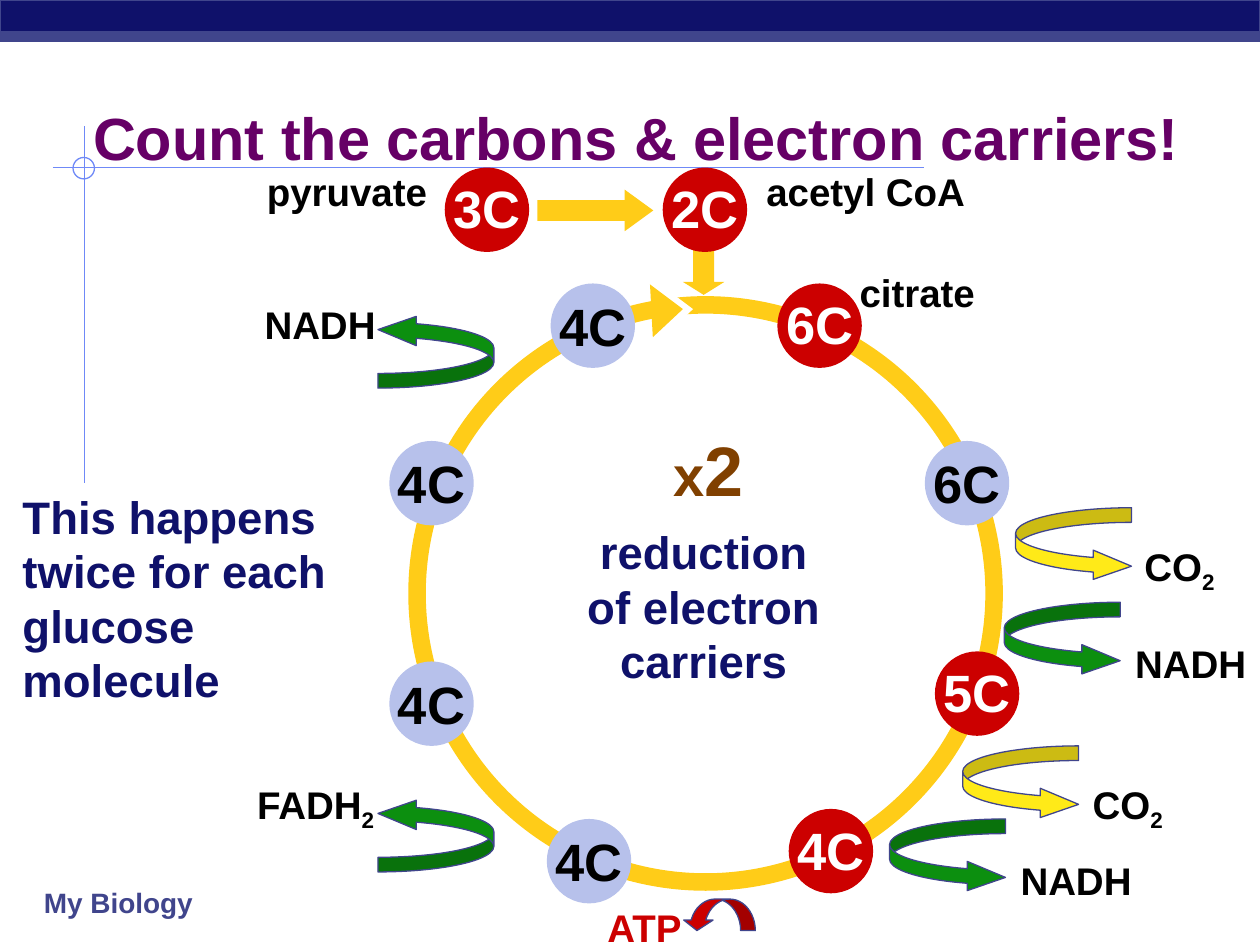
from pptx import Presentation
from pptx.dml.color import RGBColor
from pptx.enum.shapes import MSO_CONNECTOR, MSO_SHAPE
from pptx.enum.text import MSO_ANCHOR, MSO_AUTO_SIZE, PP_ALIGN
from pptx.oxml.ns import qn
from pptx.util import Inches, Pt
from lxml import etree

STRAIGHT = MSO_CONNECTOR.STRAIGHT
OVAL, RECT = MSO_SHAPE.OVAL, MSO_SHAPE.RECTANGLE
DOWN, RIGHT = MSO_SHAPE.DOWN_ARROW, MSO_SHAPE.RIGHT_ARROW
CURVED = MSO_SHAPE.CURVED_RIGHT_ARROW
TOP, MIDDLE = MSO_ANCHOR.TOP, MSO_ANCHOR.MIDDLE
LEFT, CENTER = PP_ALIGN.LEFT, PP_ALIGN.CENTER
GROW = MSO_AUTO_SIZE.SHAPE_TO_FIT_TEXT

BLACK = RGBColor(0x00, 0x00, 0x00)
WHITE = RGBColor(0xFF, 0xFF, 0xFF)
NAVY = RGBColor(0x0F, 0x11, 0x6A)
SLATE = RGBColor(0x40, 0x45, 0x8C)
RULE_BLUE = RGBColor(0x6F, 0x89, 0xF7)
PALE_BLUE = RGBColor(0xB7, 0xC1, 0xEB)
RED = RGBColor(0xCC, 0x00, 0x00)
GOLD = RGBColor(0xFF, 0xCC, 0x18)
YELLOW = RGBColor(0xFF, 0xEA, 0x18)
GREEN = RGBColor(0x0C, 0x8F, 0x0F)
PURPLE = RGBColor(0x66, 0x00, 0x66)
BROWN = RGBColor(0x80, 0x40, 0x00)

CIRCLE = 0.67
SIDE_ARROW = (0.92, 0.58)
SIDE_BENDS = (0.2, 0.4, 0.524)


class CyclePage:
    """Style and drawing methods for the current slide."""

    font = "Arial"

    def __init__(self, page):
        self.page = page

    def line(self, x1, y1, x2, y2, color, width):
        rule = self.page.shapes.add_connector(
            STRAIGHT, Inches(x1), Inches(y1), Inches(x2), Inches(y2))
        rule.line.color.rgb = color
        rule.line.width = Pt(width)
        etree.SubElement(rule._element.spPr, qn("a:effectLst"))

    def shape(self, kind, at, fill=None, line=None, width=0.75, bends=(),
              rotation=0, flipped=False, parent=None):
        shape = (parent or self.page).shapes.add_shape(kind, *map(Inches, at))
        shape.shadow.inherit = False
        if fill is None:
            shape.fill.background()
        else:
            shape.fill.solid()
            shape.fill.fore_color.rgb = fill
        if line is None:
            shape.line.fill.background()
        else:
            shape.line.color.rgb = line
            shape.line.width = Pt(width)
        for index, bend in enumerate(bends):
            shape.adjustments[index] = bend
        shape.rotation = rotation
        if flipped:
            frame = shape._element.spPr.find(qn("a:xfrm"))
            frame.set("flipH", "1")
            frame.set("flipV", "1")
        return shape

    def style(self, span, size, color):
        span.font.name = self.font
        span.font.size = Pt(size)
        span.font.bold = True
        span.font.color.rgb = color

    def text(self, at, words, size=22, color=BLACK, align=CENTER,
             anchor=MIDDLE, wrap=False, fill=None, parent=None):
        box = (parent or self.page).shapes.add_textbox(*map(Inches, at))
        if fill is not None:
            box.fill.solid()
            box.fill.fore_color.rgb = fill
        frame = box.text_frame
        frame.word_wrap = wrap
        frame.auto_size = GROW
        frame.vertical_anchor = anchor
        para = frame.paragraphs[0]
        para.text = words
        para.alignment = align
        for span in para.runs:
            self.style(span, size, color)
        return para

    def append(self, para, words, size=22, color=BLACK, subscript=False):
        span = para.add_run()
        span.text = words
        self.style(span, size, color)
        if subscript:
            span._r.get_or_add_rPr().set("baseline", "-25000")

    def carbon(self, left, top, count, fill, color, drop):
        group = self.page.shapes.add_group_shape()
        self.shape(OVAL, (left, top, CIRCLE, CIRCLE), fill, parent=group)
        self.text((left - 0.03, top + drop, 0.73, 0.6), count, 30, color,
                  parent=group)

    def product(self, arrow_at, label_at, words, fill, subscript="",
                flipped=False, label_fill=None):
        group = self.page.shapes.add_group_shape()
        self.shape(CURVED, arrow_at + SIDE_ARROW, fill, SLATE,
                   bends=SIDE_BENDS, flipped=flipped, parent=group)
        para = self.text(label_at + (0.47,), words, fill=label_fill,
                         parent=group)
        if subscript:
            self.append(para, subscript, subscript=True)


def main():
    deck = Presentation()
    deck.slide_width, deck.slide_height = Inches(10), Inches(7.5)
    cycle = CyclePage(deck.slides.add_slide(deck.slide_layouts[6]))

    # Frame: rules, top bands and footer
    cycle.line(0.42, 1.33, 7.33, 1.33, RULE_BLUE, 1)
    cycle.line(0.67, 1, 0.67, 3.83, RULE_BLUE, 1)
    cycle.shape(OVAL, (0.58, 1.25, 0.17, 0.17), line=RULE_BLUE)
    cycle.shape(RECT, (0, 0, 10, 0.33), NAVY, SLATE)
    cycle.shape(RECT, (0, 0.25, 10, 0.08), SLATE, SLATE)
    cycle.text((0.25, 6.98, 1.58, 0.37), "My Biology", 16, SLATE, LEFT,
               wrap=True)

    # Ring and the arrow feeding it
    cycle.shape(DOWN, (5.42, 1.92, 0.33, 0.42), GOLD, bends=(0.5, 0.312))
    cycle.shape(OVAL, (3.31, 2.42, 4.58, 4.58), line=GOLD, width=10)

    # Carbon counts
    for left, top, count in ((4.37, 2.25, "4C"), (7.34, 3.5, "6C"),
                             (4.34, 6.5, "4C"), (3.09, 5.25, "4C"),
                             (3.09, 3.5, "4C")):
        cycle.carbon(left, top, count, PALE_BLUE, BLACK, 0.03)
    for left, top, count in ((5.26, 1.33, "2C"), (6.17, 2.25, "6C"),
                             (7.42, 5.17, "5C"), (6.26, 6.42, "4C"),
                             (3.53, 1.33, "3C")):
        cycle.carbon(left, top, count, RED, WHITE, 0.02)

    # Carbon dioxide given off
    cycle.product((8.06, 4.03), (8.97, 4.28, 0.78), "CO", YELLOW, "2")
    cycle.product((7.64, 5.92), (8.56, 6.17, 0.78), "CO", YELLOW, "2")

    # Title and molecule names
    cycle.text((6.72, 2.08, 1.12, 0.47), "citrate")
    cycle.text((5.98, 1.28, 1.78, 0.47), "acetyl CoA")
    cycle.text((2.02, 1.28, 1.48, 0.47), "pyruvate", align=LEFT)
    cycle.text((0.64, 0.75, 8.92, 0.67),
               "Count the carbons & electron carriers!", 34, PURPLE, LEFT, TOP)

    # Arrowhead closing the ring, with a white gap behind it
    for left, fill in ((5.25, WHITE), (5.17, GOLD)):
        cycle.shape(RIGHT, (left, 2.25, 0.25, 0.42), fill, bends=(0.484, 1),
                    rotation=356.9)
    cycle.shape(DOWN, (4.56, 1.21, 0.33, 0.92), GOLD, bends=(0.5, 0.688),
                rotation=270)

    # Centre of the ring
    times = cycle.text((5.24, 3.33, 0.76, 0.77), "x", 32, BROWN)
    cycle.append(times, "2", 40, BROWN)
    cycle.text((4.56, 4.11, 2.05, 1.4), "reduction\nof electron\ncarriers",
               26, NAVY, anchor=TOP)

    # Electron carriers
    cycle.product((7.97, 4.78), (8.91, 5.03, 1.08), "NADH", GREEN)
    cycle.product((7.06, 6.5), (8, 6.75, 1.08), "NADH", GREEN,
                  label_fill=WHITE)
    cycle.product((3, 6.34), (1.92, 6.17, 1.17), "FADH", GREEN, "2",
                  flipped=True)
    cycle.product((3, 2.5), (2, 2.34, 1.08), "NADH", GREEN, flipped=True)

    # ATP
    energy = cycle.page.shapes.add_group_shape()
    cycle.shape(CURVED, (5.58, 6.97, 0.25, 0.58), RED, SLATE,
                bends=(0.467, 0.933, 0.333), rotation=270, flipped=True,
                parent=energy)
    cycle.text((4.71, 7.12, 0.81, 0.47), "ATP", color=RED, parent=energy)

    # Side remark
    cycle.text((0.08, 3.83, 2.92, 1.84),
               "This happens twice for each glucose molecule", 26, NAVY,
               LEFT, TOP, wrap=True)

    deck.save("out.pptx")


if __name__ == "__main__":
    main()
